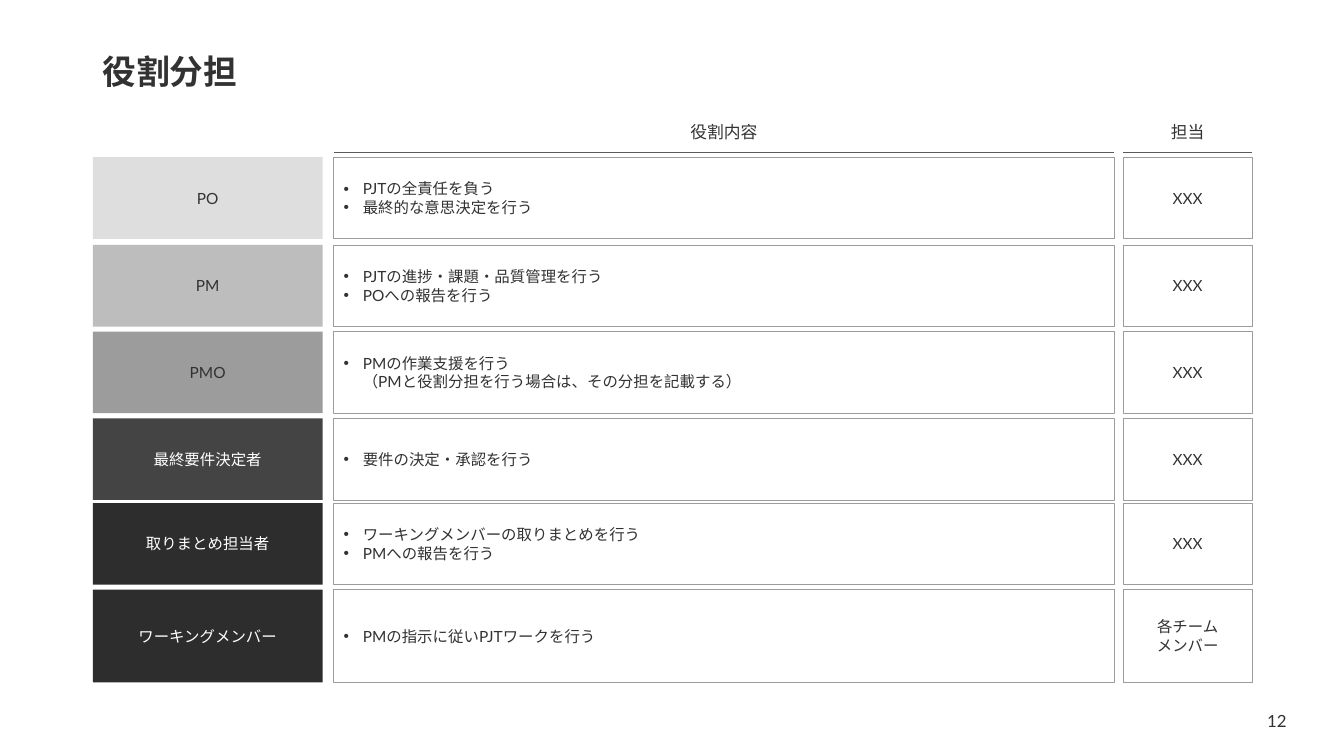
from copy import deepcopy

from lxml import etree
from pptx import Presentation
from pptx import util as u
from pptx.dml.color import RGBColor
from pptx.enum import shapes, text
from pptx.oxml import ns

PX = u.Inches(1) // 100
FONT = "Lato"

INK = RGBColor(0x32, 0x32, 0x32)
WHITE = RGBColor(0xFF, 0xFF, 0xFF)
RULE = RGBColor(0x5A, 0x5A, 0x5A)
BORDER = RGBColor(0x9C, 0x9C, 0x9C)
LIGHT = RGBColor(0xDE, 0xDE, 0xDE)
SILVER = RGBColor(0xBD, 0xBD, 0xBD)
GREY = RGBColor(0x9C, 0x9C, 0x9C)
DARK = RGBColor(0x44, 0x44, 0x44)
BLACK = RGBColor(0x2D, 0x2D, 0x2D)

# Column: left, width
ROLE = (92, 228)
DUTY = (331, 774)
OWNER = (1114, 128)
HEADINGS = [(DUTY, "役割内容"), (OWNER, "担当")]
HEADING_TOP, HEADING_HEIGHT, RULE_TOP = 116, 30, 151

CENTER = {"alignment": text.PP_ALIGN.CENTER}
TITLE = {"alignment": text.PP_ALIGN.LEFT, "line_spacing": 0.9}
BULLET = {"alignment": text.PP_ALIGN.LEFT}
BULLET_INDENT = 19

# Row: top, height, role, fill, role colour, duties, owner
ROWS = [
    (156, 81, "PO", LIGHT, INK,
     ["PJTの全責任を負う", "最終的な意思決定を行う"], ["XXX"]),
    (243, 81, "PM", SILVER, INK,
     ["PJTの進捗・課題・品質管理を行う", "POへの報告を行う"], ["XXX"]),
    (329, 81, "PMO", GREY, INK,
     ["PMの作業支援を行う\v（PMと役割分担を行う場合は、その分担を記載する）"], ["XXX"]),
    (415, 81, "最終要件決定者", DARK, WHITE,
     ["要件の決定・承認を行う"], ["XXX"]),
    (499, 81, "取りまとめ担当者", BLACK, WHITE,
     ["ワーキングメンバーの取りまとめを行う", "PMへの報告を行う"], ["XXX"]),
    (585, 92, "ワーキングメンバー", BLACK, WHITE,
     ["PMの指示に従いPJTワークを行う"], ["各チーム", "メンバー"]),
]


def apply(target, formats):
    for name, value in formats.items():
        setattr(target, name, value)


def add_bullet(paragraph):
    props = paragraph._p.get_or_add_pPr()
    props.set("marL", str(BULLET_INDENT * PX))
    props.set("indent", str(-BULLET_INDENT * PX))
    etree.SubElement(props, ns.qn("a:buFont"), typeface="Arial")
    etree.SubElement(props, ns.qn("a:buChar"), char="•")


def write(frame, lines, layout, size, color=INK, bold=False):
    """Fill a text frame with one paragraph for each line."""
    apply(frame, {"word_wrap": True, "vertical_anchor": text.MSO_ANCHOR.MIDDLE})
    frame.text = "\n".join(lines)
    for paragraph in frame.paragraphs:
        apply(paragraph, layout)
        if layout is BULLET:
            add_bullet(paragraph)
        for run in paragraph.runs:
            apply(run.font, {"name": FONT, "size": u.Pt(size), "bold": bold})
            run.font.color.rgb = color
            run_props = run._r.get_or_add_rPr()
            etree.SubElement(run_props, ns.qn("a:ea"), typeface=FONT)
        for line_break in paragraph._p.findall(ns.qn("a:br")):
            line_break.append(deepcopy(run_props))


def add_label(slide, box, line, layout, size, bold=False):
    label = slide.shapes.add_textbox(*(n * PX for n in box))
    write(label.text_frame, [line], layout, size, bold=bold)


def add_cell(slide, column, top, height, lines, layout, fill=None, color=INK):
    """Draw a filled box, or an outlined one when no fill is given."""
    left, width = column
    cell = slide.shapes.add_shape(
        shapes.MSO_SHAPE.RECTANGLE, *(n * PX for n in (left, top, width, height)))
    cell.shadow.inherit = False
    if fill is None:
        cell.fill.background()
        cell.line.color.rgb = BORDER
        cell.line.width = u.Pt(0.5)
    else:
        cell.fill.solid()
        cell.fill.fore_color.rgb = fill
        cell.line.fill.background()
    write(cell.text_frame, lines, layout, 11, color)


def add_heading(slide, column, caption):
    left, width = column
    ends = (left, RULE_TOP, left + width, RULE_TOP)
    rule = slide.shapes.add_connector(
        shapes.MSO_CONNECTOR.STRAIGHT, *(n * PX for n in ends))
    rule.line.color.rgb = RULE
    rule.line.width = u.Pt(0.5)
    etree.SubElement(rule._element.spPr, ns.qn("a:effectLst"))
    add_label(slide, (left, HEADING_TOP, width, HEADING_HEIGHT), caption, CENTER, 12)


def main():
    deck = Presentation()
    apply(deck, {"slide_width": 1333 * PX, "slide_height": 750 * PX})
    slide = deck.slides.add_slide(deck.slide_layouts[6])

    add_label(slide, (92, 40, 1150, 67), "役割分担", TITLE, 24, bold=True)
    for column, caption in HEADINGS:
        add_heading(slide, column, caption)
    for top, height, role, fill, color, duties, owner in ROWS:
        add_cell(slide, ROLE, top, height, [role], CENTER, fill, color)
        add_cell(slide, DUTY, top, height, duties, BULLET)
        add_cell(slide, OWNER, top, height, owner, CENTER)
    add_label(slide, (1242, 695, 49, 40), "12", CENTER, 12)

    deck.save("out.pptx")


if __name__ == "__main__":
    main()
